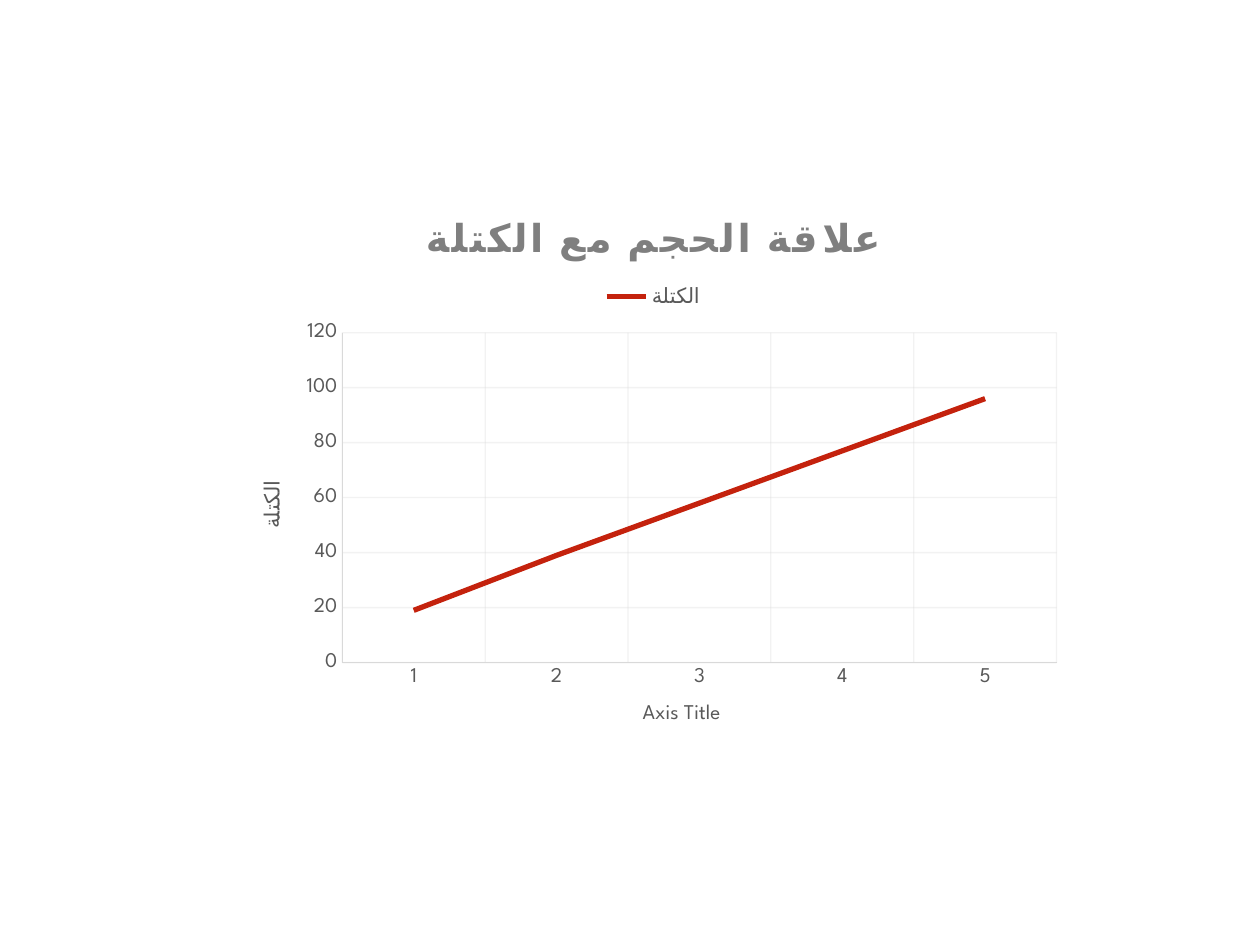
from lxml import etree
from pptx import Presentation
from pptx import util as u
from pptx.chart.data import CategoryChartData
from pptx.dml.color import RGBColor
from pptx.enum import chart as c
from pptx.oxml.ns import qn

Pt = u.Pt


def color(value):
    return RGBColor.from_string(value)


def add_child(parent, tag, **attributes):
    child = etree.SubElement(parent, qn(tag))
    for name, value in attributes.items():
        child.set(name, str(value))
    return child


class Slide:
    face = "League Spartan"
    ink = "595959"
    rule = "D9D9D9"
    size = 12

    def __init__(self, deck):
        self.page = deck.slides.add_slide(deck.slide_layouts[6])

    def font(self, font, size=None, ink=None, bold=False):
        font.name = self.face
        font.size = Pt(size or self.size)
        font.color.rgb = color(ink or self.ink)
        font.bold = bold

    def heading(self, title, words, size=None, ink=None, bold=False, spacing=0, turn=0):
        title.text_frame.text = words
        para = title.text_frame.paragraphs[0]
        for font in (para.font, para.runs[0].font):
            self.font(font, size, ink, bold)
        for properties in title._element.xpath(".//a:defRPr | .//a:rPr"):
            properties.set("spc", str(spacing))
        for body in title._element.xpath(".//a:bodyPr"):
            body.set("rot", str(turn * 60000))

    def axis(self, axis, words, turn=0):
        axis.has_title = True
        self.heading(axis.axis_title, words, turn=turn)
        self.font(axis.tick_labels.font)
        axis.major_tick_mark = axis.minor_tick_mark = c.XL_TICK_MARK.NONE
        axis.has_major_gridlines = True
        for line, width in ((axis.format.line, 0.25), (axis.major_gridlines.format.line, 0.75)):
            line.color.rgb = color(self.rule)
            line.width = Pt(width)
        for paint in axis.major_gridlines._xAx.xpath("./c:majorGridlines//a:srgbClr"):
            add_child(paint, "a:alpha", val=32000)

    def plot_area(self, chart, left, top, width, height):
        area = chart._chartSpace.xpath("c:chart/c:plotArea")[0]
        for old in area.findall(qn("c:layout")):
            area.remove(old)
        layout = etree.Element(qn("c:layout"))
        area.insert(0, layout)
        manual = add_child(layout, "c:manualLayout")
        parts = dict(layoutTarget="inner", xMode="edge", yMode="edge",
                     x=left, y=top, w=width, h=height)
        for name, value in parts.items():
            add_child(manual, "c:" + name, val=value)

    def line_chart(self, left, top, width, height, title, name, values, labels, line):
        data = CategoryChartData()
        data.categories = [str(i) for i in range(1, len(values) + 1)]
        data.add_series(name, values)
        chart = self.page.shapes.add_chart(
            c.XL_CHART_TYPE.LINE, Pt(left), Pt(top), Pt(width), Pt(height), data).chart
        self.font(chart.font, 10, "000000")
        chart.has_title = True
        self.heading(chart.chart_title, title, 22, "7F7F7F", True, 150)
        chart.has_legend = True
        chart.legend.position = c.XL_LEGEND_POSITION.TOP
        chart.legend.include_in_layout = False
        self.font(chart.legend.font)
        self.axis(chart.category_axis, labels[0])
        self.axis(chart.value_axis, labels[1], -90)
        chart.value_axis.minimum_scale = 0
        chart.value_axis.maximum_scale = 120
        chart.value_axis.major_unit = 20
        chart.plots[0].vary_by_categories = False
        series = chart.plots[0].series[0]
        series.smooth = False
        series.marker.style = c.XL_MARKER_STYLE.NONE
        series.format.line.color.rgb = color(line)
        series.format.line.width = Pt(3)
        self.plot_area(chart, 0.13, 0.25, 0.85, 0.59)


def main():
    deck = Presentation()
    deck.slide_width, deck.slide_height = Pt(720), Pt(540)
    Slide(deck).line_chart(
        133.2, 110.2, 480.2, 319.7, "علاقة الحجم مع الكتلة", "الكتلة",
        (19, 39, 58, 77, 96), ("Axis Title", "الكتلة"), "C4220D")
    deck.save("out.pptx")


if __name__ == "__main__":
    main()
